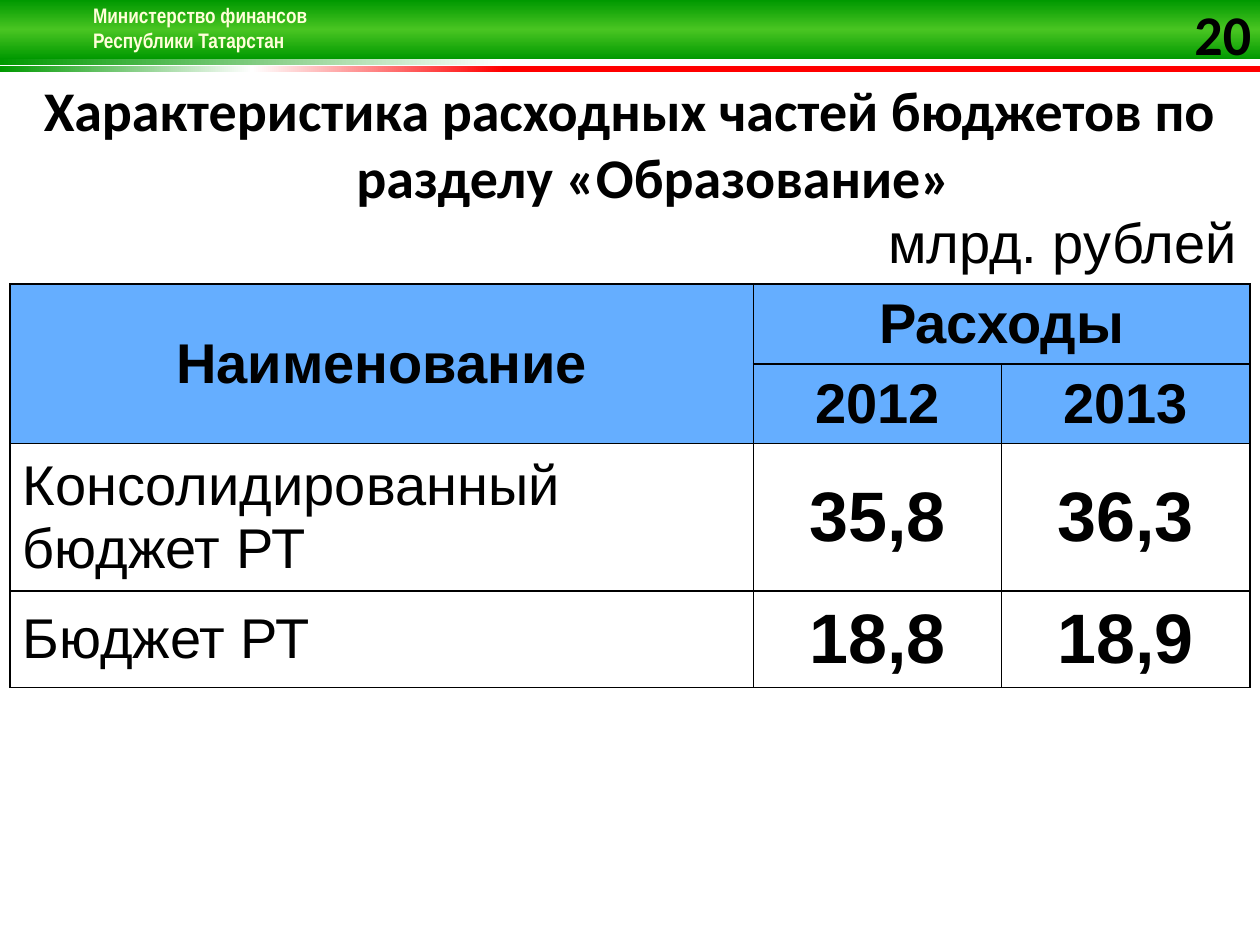
from lxml.etree import SubElement
from pptx import Presentation
from pptx.dml.color import RGBColor
from pptx.enum.shapes import MSO_SHAPE
from pptx.enum.text import MSO_ANCHOR, PP_ALIGN
from pptx.oxml import parse_xml
from pptx.oxml.ns import nsdecls, qn
from pptx.util import Inches, Pt

BLACK = RGBColor(0x00, 0x00, 0x00)
WHITE = RGBColor(0xFF, 0xFF, 0xFF)
CREAM = RGBColor(0xFF, 0xFF, 0xD9)
GREEN = RGBColor(0x00, 0x99, 0x00)
LIME = RGBColor(0x49, 0xC5, 0x22)
RED = RGBColor(0xFF, 0x00, 0x00)
BLUE = RGBColor(0x65, 0xAE, 0xFF)

# Content
MINISTRY = "Министерство финансов\vРеспублики Татарстан"
TITLE = "Характеристика расходных частей бюджетов по разделу «Образование»"
PAGE_NUMBER = "20"
UNIT = "млрд. рублей"
HEADINGS = [["Наименование", "Расходы", ""], ["", "2012", "2013"]]
BUDGETS = [
    ["Консолидированный бюджет РТ", "35,8", "36,3"],
    ["Бюджет РТ", "18,8", "18,9"],
]
COLUMN_WIDTHS = [5.9, 1.97, 1.97]
ROW_HEIGHTS = [0.6, 0.6, 0.6, 1.1, 0.72]
MERGES = [((0, 0), (0, 2)), ((1, 0), (2, 0)), ((1, 1), (1, 2))]

# Flag bands: top, height, angle, gradient stops
BANDS = [
    (0.47, 0.05, 180, [(0, WHITE), (60, WHITE), (100, GREEN)]),
    (0.52, 0.05, 180, [(60, RED), (80, WHITE), (100, GREEN)]),
    (0, 0.47, 90, [(0, GREEN), (50, LIME), (100, GREEN)]),
]


def write(frame, text, size=32, font="Arial", bold=False, color=BLACK,
          align=PP_ALIGN.LEFT, hanging=None):
    para = frame.paragraphs[0]
    para.text = text
    para.alignment = align
    if hanging:
        properties = para._p.get_or_add_pPr()
        properties.set("marL", str(Inches(hanging)))
        properties.set("indent", str(-Inches(hanging)))
    for span in para.runs:
        span.font.size = Pt(size)
        span.font.bold = bold
        span.font.color.rgb = color
        span.font.name = font
    return para


def add_text(page, left, top, width, height, text, margin=None, **style):
    frame = page.shapes.add_textbox(
        Inches(left), Inches(top), Inches(width), Inches(height)).text_frame
    frame.word_wrap = True
    if margin is not None:
        frame.margin_left = frame.margin_right = Inches(margin)
        frame.margin_top = frame.margin_bottom = Inches(margin)
    return write(frame, text, **style)


def add_band(page, top, height, angle, stops):
    band = page.shapes.add_shape(
        MSO_SHAPE.RECTANGLE, 0, Inches(top), Inches(10), Inches(height))
    band.shadow.inherit = False
    band.line.fill.background()
    band.fill.gradient()
    band.fill.gradient_angle = angle
    stop_list = band._element.spPr.find(qn("a:gradFill")).find(qn("a:gsLst"))
    stop_list.clear()
    for position, color in stops:
        stop = SubElement(stop_list, qn("a:gs"), pos=str(position * 1000))
        SubElement(stop, qn("a:srgbClr"), val=str(color))


def add_shadow(para):
    for span in para.runs:
        span._r.rPr.find(qn("a:latin")).addprevious(parse_xml(
            f'<a:effectLst {nsdecls("a")}><a:outerShdw blurRad="38100" '
            'dist="38100" dir="2700000" algn="tl"><a:srgbClr val="000000">'
            '<a:alpha val="60000"/></a:srgbClr></a:outerShdw></a:effectLst>'))


def set_borders(cell, visible):
    properties = cell._tc.get_or_add_tcPr()
    for side in "LRTB":
        line = SubElement(properties, qn(f"a:ln{side}"), w=str(Pt(1)))
        if side in visible:
            fill = SubElement(line, qn("a:solidFill"))
            SubElement(fill, qn("a:srgbClr"), val=str(BLACK))
        else:
            SubElement(line, qn("a:noFill"))


def add_budget_table(page):
    rows = [[UNIT, "", ""]] + HEADINGS + BUDGETS
    table = page.shapes.add_table(
        len(rows), len(COLUMN_WIDTHS), Inches(0.08), Inches(1.62),
        Inches(sum(COLUMN_WIDTHS)), Inches(sum(ROW_HEIGHTS))).table
    table.first_row = table.horz_banding = False
    for column, width in zip(table.columns, COLUMN_WIDTHS):
        column.width = Inches(width)
    for row, height in zip(table.rows, ROW_HEIGHTS):
        row.height = Inches(height)
    for start, end in MERGES:
        table.cell(*start).merge(table.cell(*end))

    for r, texts in enumerate(rows):
        is_heading = 1 <= r <= len(HEADINGS)
        for c, text in enumerate(texts):
            cell = table.cell(r, c)
            set_borders(cell, "LRTB" if r else "B")
            if is_heading:
                cell.fill.solid()
                cell.fill.fore_color.rgb = BLUE
            else:
                cell.fill.background()
            cell.vertical_anchor = MSO_ANCHOR.MIDDLE
            if not text:
                continue
            is_value = r > len(HEADINGS) and c > 0
            if r == 0:
                align = PP_ALIGN.RIGHT
            elif is_heading or is_value:
                align = PP_ALIGN.CENTER
            else:
                align = PP_ALIGN.LEFT
            write(cell.text_frame, text, size=40 if is_value else 32,
                  bold=is_heading or is_value, align=align)


def main():
    deck = Presentation()
    deck.slide_width, deck.slide_height = Inches(10), Inches(7.5)
    page = deck.slides.add_slide(deck.slide_layouts[6])

    # Header
    for band in BANDS:
        add_band(page, *band)
    add_shadow(add_text(page, 0.64, -0.03, 1.92, 0.71, MINISTRY, size=12,
                        font="Arial Narrow", bold=True, color=CREAM))

    # Title, table and page number
    heading = dict(font="Calibri", bold=True, align=PP_ALIGN.CENTER)
    add_text(page, 0, 0.55, 10, 1.16, TITLE, hanging=0.38, **heading)
    add_budget_table(page)
    add_text(page, 9.41, 0, 0.59, 0.54, PAGE_NUMBER, margin=0, **heading)

    deck.save("out.pptx")


if __name__ == "__main__":
    main()
